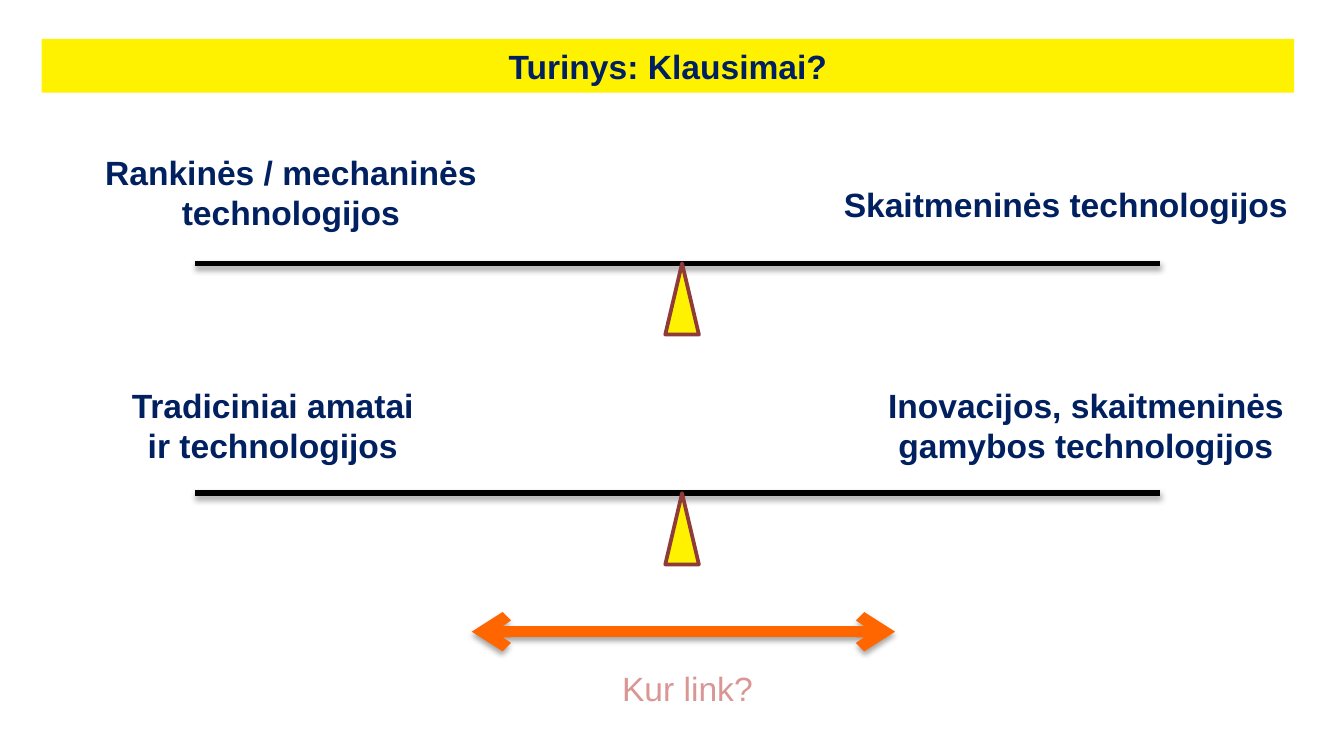
from lxml.etree import SubElement
from pptx import Presentation
from pptx.dml.color import RGBColor
from pptx.enum.shapes import MSO_CONNECTOR, MSO_SHAPE
from pptx.enum.text import MSO_ANCHOR, MSO_AUTO_SIZE, PP_ALIGN
from pptx.oxml.ns import qn
from pptx.util import Inches, Pt

NAVY = RGBColor(0x00, 0x20, 0x60)
YELLOW = RGBColor(0xFF, 0xF2, 0x00)
BROWN = RGBColor(0x8E, 0x3B, 0x39)
ORANGE = RGBColor(0xFF, 0x66, 0x00)
ROSE = RGBColor(0xD9, 0x96, 0x94)
BLACK = RGBColor(0x00, 0x00, 0x00)

# Grid of 100 columns by 56.25 rows (16:9), square cells
WIDE, HIGH = 100, 56.25
CELL = Inches(10) / WIDE


def grid(*cells):
    return [round(n * CELL) for n in cells]


def write(shape, text, color=NAVY, bold=True, align=PP_ALIGN.CENTER, wrap=True):
    frame = shape.text_frame
    frame.word_wrap = wrap
    frame.auto_size = MSO_AUTO_SIZE.NONE
    frame.text = text
    para = frame.paragraphs[0]
    para.alignment = align
    font = para.runs[0].font
    font.name, font.size, font.bold = "Arial", Pt(18), bold
    font.color.rgb = color


def label(slide, box, text, **style):
    write(slide.shapes.add_textbox(*grid(*box)), text, **style)


def rule(slide, left, right, y, color, width, heads=False):
    """Level line with a soft shadow below, and arrowheads if asked."""
    line = slide.shapes.add_connector(
        MSO_CONNECTOR.STRAIGHT, *grid(left, y, right, y))
    line.line.color.rgb = color
    line.line.width = Pt(width)
    if heads:
        for end in ("a:headEnd", "a:tailEnd"):
            SubElement(line.line._get_or_add_ln(), qn(end), type="arrow")
    effects = SubElement(line._element.spPr, qn("a:effectLst"))
    shade = SubElement(effects, qn("a:outerShdw"), blurRad=str(Pt(3.1)),
                       dist=str(Pt(1.8)), dir="5400000", rotWithShape="0")
    tint = SubElement(shade, qn("a:srgbClr"), val="000000")
    SubElement(tint, qn("a:alpha"), val="35000")


def header(slide, box, text):
    title = slide.shapes.title
    title.left, title.top, title.width, title.height = grid(*box)
    title.fill.solid()
    title.fill.fore_color.rgb = YELLOW
    title.text_frame.vertical_anchor = MSO_ANCHOR.MIDDLE
    write(title, text)


def scale(slide, box, sides):
    """Beam on a wedge; side labels are placed from the box's corner."""
    left, top, width, height = box
    base, rise = 2.5, 5.3
    beam = top + height - rise
    rule(slide, left, left + width, beam, BLACK, 3)
    wedge = slide.shapes.add_shape(
        MSO_SHAPE.ISOSCELES_TRIANGLE,
        *grid(left + width / 2 - base / 2 + 0.35, beam, base, rise))
    wedge.shadow.inherit = False
    wedge.fill.solid()
    wedge.fill.fore_color.rgb = YELLOW
    wedge.line.color.rgb = BROWN
    wedge.line.width = Pt(2)
    for (x, y, w, h), text, style in sides:
        label(slide, (left + x, top + y, w, h), text, **style)


def link(slide, box, text):
    left, top, width, height = box
    rule(slide, left, left + width, top, ORANGE, 6, heads=True)
    label(slide, (left + 10.2, top + height - 4, 11.8, 4), text, color=ROSE,
          bold=False, align=PP_ALIGN.LEFT, wrap=False)


def main():
    deck = Presentation()
    deck.slide_width, deck.slide_height = grid(WIDE, HIGH)
    slide = deck.slides.add_slide(deck.slide_layouts[5])

    # Title band
    header(slide, (3.1, 2.9, 93.2, 4), "Turinys: Klausimai?")

    # Two scales
    scale(slide, (14.5, 10.8, 71.8, 14.1), [
        ((-9.4, 0, 33.1, 7.1), "Rankinės / mechaninės technologijos", {}),
        ((47.3, 2.4, 35.4, 4), "Skaitmeninės technologijos",
         {"align": PP_ALIGN.LEFT, "wrap": False}),
    ])
    scale(slide, (14.5, 28.15, 71.8, 13.85), [
        ((-6.2, 0, 24, 7.1), "Tradiciniai amatai ir technologijos", {}),
        ((48.9, 0, 34.8, 7.1),
         "Inovacijos, skaitmeninės gamybos technologijos", {}),
    ])

    # Double arrow and question
    link(slide, (35.1, 47, 31.5, 6.2), "Kur link?")
    deck.save("out.pptx")


if __name__ == "__main__":
    main()
